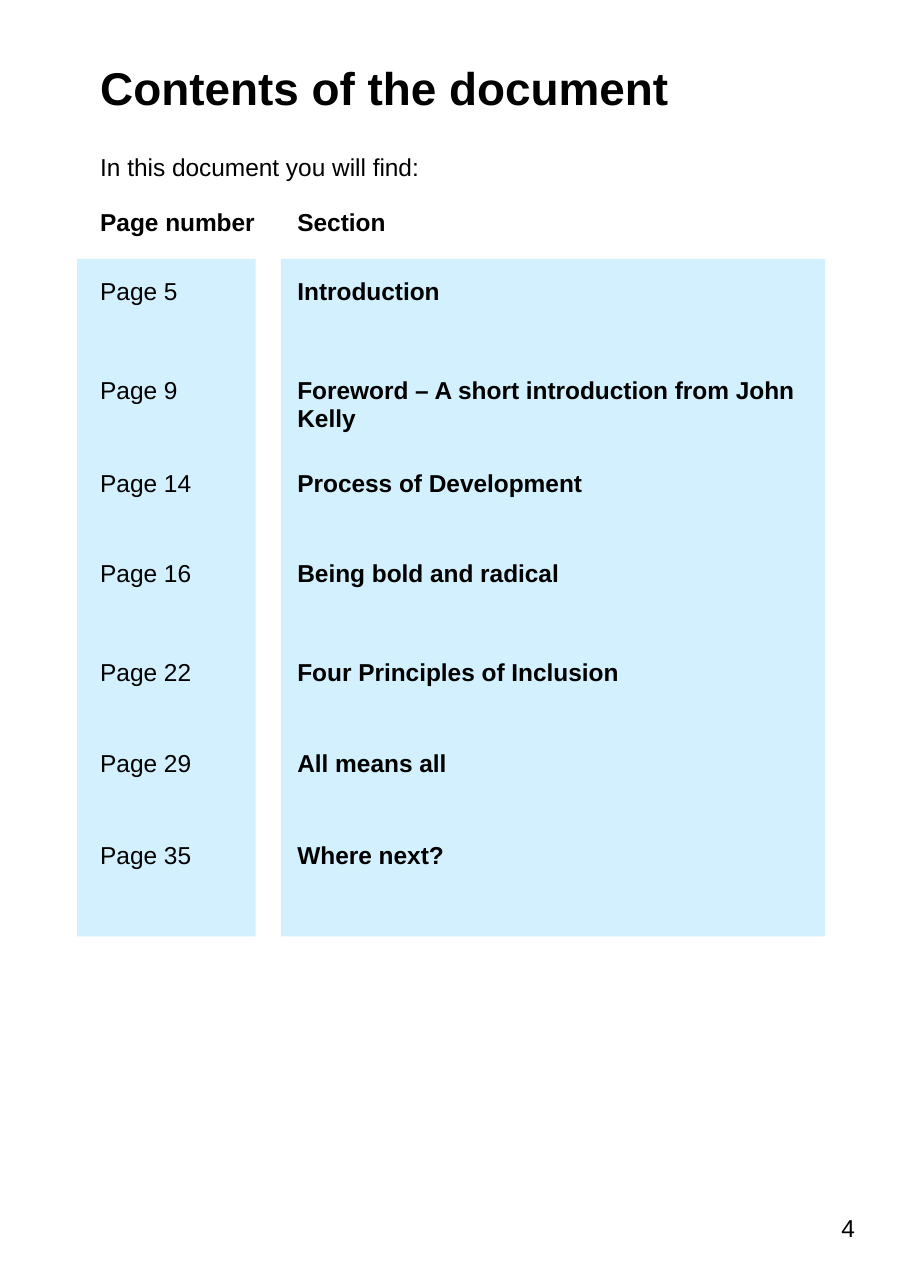
"""Builds the contents page of a portrait document."""
from pptx import Presentation
from pptx.dml.color import RGBColor
from pptx.enum.shapes import MSO_SHAPE
from pptx.enum.text import MSO_ANCHOR, PP_ALIGN
from pptx.util import Inches, Pt

BLACK = RGBColor(0x00, 0x00, 0x00)
PALE_BLUE = RGBColor(0xD2, 0xF0, 0xFD)
RECTANGLE = MSO_SHAPE.RECTANGLE
MIDDLE = MSO_ANCHOR.MIDDLE
LEFT, RIGHT = PP_ALIGN.LEFT, PP_ALIGN.RIGHT
NO_STYLE_NO_GRID = "{2D5ABB26-0587-4C30-8999-92F81FD0307C}"

HEADINGS = [
    ("Contents of the document", 30, True, 0.82),
    ("In this document you will find:", 16, False, 0.5),
]
SECTIONS = [
    ("Page number", "Section", 0.63),
    ("Page 5", "Introduction", 0.9),
    ("Page 9", "Foreword – A short introduction from John Kelly", 0.84),
    ("Page 14", "Process of Development", 0.82),
    ("Page 16", "Being bold and radical", 0.9),
    ("Page 22", "Four Principles of Inclusion", 0.82),
    ("Page 29", "All means all", 0.84),
    ("Page 35", "Where next?", 0.82),
]


def write(frame, text, size=16, bold=False, align=LEFT):
    paragraph = frame.paragraphs[0]
    paragraph.alignment = align
    run = paragraph.add_run()
    run.text = text
    run.font.name = "Arial"
    run.font.size = Pt(size)
    run.font.bold = bold
    run.font.color.rgb = BLACK


prs = Presentation()
prs.slide_width = Inches(8.27)
prs.slide_height = Inches(11.69)
slide = prs.slides.add_slide(prs.slide_layouts[6])

for left, width in [(0.7, 1.62), (2.55, 4.94)]:
    column_panel = slide.shapes.add_shape(
        RECTANGLE, Inches(left), Inches(2.35), Inches(width), Inches(6.15))
    column_panel.shadow.inherit = False
    column_panel.fill.solid()
    column_panel.fill.fore_color.rgb = PALE_BLUE
    column_panel.line.fill.background()

row_heights = [row[-1] for row in HEADINGS + SECTIONS]
contents_frame = slide.shapes.add_table(
    len(row_heights), 2, Inches(0.81), Inches(0.53),
    Inches(6.69), Inches(sum(row_heights)))
contents = contents_frame.table
contents.first_row = False
contents.horz_banding = False
contents._tbl.tblPr.find("{*}tableStyleId").text = NO_STYLE_NO_GRID
contents.columns[0].width = Inches(1.79)
contents.columns[1].width = Inches(4.9)
for row, height in zip(contents.rows, row_heights):
    row.height = Inches(height)
for cell in contents.iter_cells():
    cell.fill.background()

for index, (text, size, bold, _) in enumerate(HEADINGS):
    heading = contents.cell(index, 0)
    heading.merge(contents.cell(index, 1))
    write(heading.text_frame, text, size=size, bold=bold)

for index, (page, section, _) in enumerate(SECTIONS, start=len(HEADINGS)):
    is_header = index == len(HEADINGS)
    write(contents.cell(index, 0).text_frame, page, bold=is_header)
    write(contents.cell(index, 1).text_frame, section, bold=True)

page_number = slide.shapes.add_textbox(
    Inches(5.93), Inches(10.83), Inches(1.93), Inches(0.62)).text_frame
page_number.word_wrap = True
page_number.vertical_anchor = MIDDLE
write(page_number, "4", align=RIGHT)

prs.save("out.pptx")
